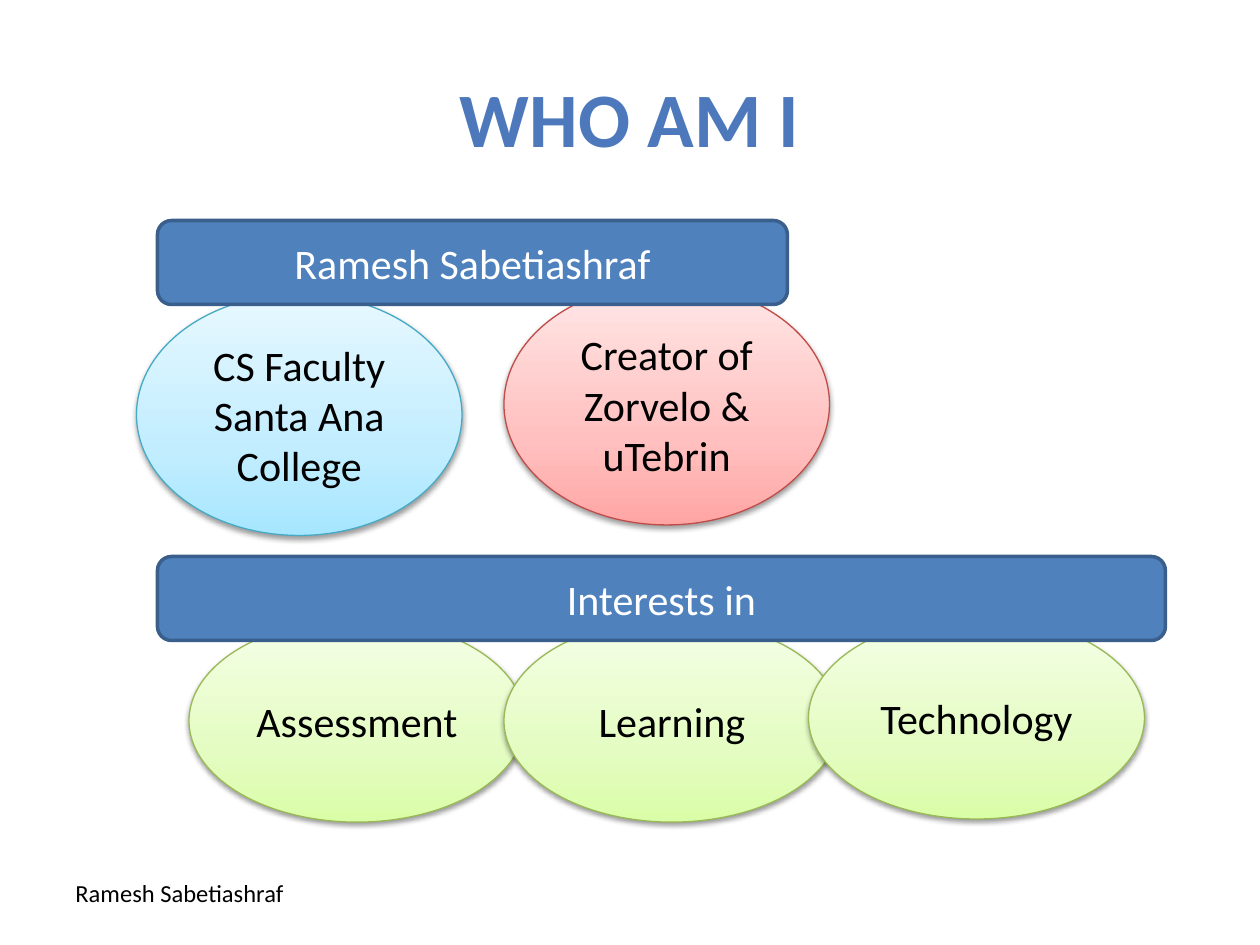
from dataclasses import dataclass

from lxml import etree
from pptx import Presentation
from pptx.dml.color import RGBColor
from pptx.enum.shapes import MSO_SHAPE
from pptx.enum.text import MSO_ANCHOR, PP_ALIGN
from pptx.oxml.ns import qn
from pptx.util import Inches, Pt

ELLIPSE, BAR = MSO_SHAPE.OVAL, MSO_SHAPE.ROUNDED_RECTANGLE
TOP, MIDDLE = MSO_ANCHOR.TOP, MSO_ANCHOR.MIDDLE
LEFT, CENTER = PP_ALIGN.LEFT, PP_ALIGN.CENTER
UNIT = Inches(1) // 12  # grid of 120 columns by 90 rows
FONT = "Calibri"

COLORS = {
    "title": "4D79BC", "text": "000000", "white": "FFFFFF",
    "bar": "4F81BD", "bar_line": "3A5F8C",
    "blue_line": "46AAC5", "red_line": "BF4C48", "green_line": "98B955",
}
# Gradient stops from bottom to top
GRADIENTS = {
    "blue": {0: "A7E6FF", 35: "C1EDFF", 100: "E7F8FF"},
    "red": {0: "FFA6A5", 35: "FFC0BF", 100: "FFE7E7"},
    "green": {0: "DAFDA7", 35: "E4FCC2", 100: "F5FFE7"},
}


@dataclass(frozen=True)
class Box:
    """A place on the grid, in columns and rows."""
    column: float
    row: float
    columns: float
    rows: float

    def place(self) -> list[int]:
        return [round(n * UNIT) for n in (self.column, self.row, self.columns, self.rows)]


@dataclass(frozen=True)
class Bubble:
    box: Box
    lines: tuple[str, ...]
    tone: str


@dataclass(frozen=True)
class Bar:
    box: Box
    label: str


def interest(column: float, row: float, label: str) -> Bubble:
    return Bubble(Box(column, row, 32, 19.3), (label,), "green")


# Back to front
DIAGRAM = [
    Bubble(Box(13, 28, 31, 23), ("CS Faculty", "Santa Ana College"), "blue"),
    Bubble(Box(48, 27, 31, 23), ("Creator of Zorvelo & uTebrin",), "red"),
    interest(18, 59, "Assessment"),
    Bar(Box(15, 21, 60, 8), "Ramesh Sabetiashraf"),
    interest(48, 59, "Learning"),
    interest(77, 58.7, "Technology"),
    Bar(Box(15, 53, 96, 8), "Interests in"),
]


def rgb(name: str) -> RGBColor:
    return RGBColor.from_string(COLORS[name])


def write(shape, *lines: str, size: float = 24, color: str = "text",
          bold: bool = False, align=CENTER, anchor=MIDDLE) -> None:
    frame = shape.text_frame
    frame.word_wrap = True
    frame.vertical_anchor = anchor
    frame.text = "\n".join(lines)
    for paragraph in frame.paragraphs:
        paragraph.alignment = align
        font = paragraph.runs[0].font
        font.name, font.size, font.bold = FONT, Pt(size), bold
        font.color.rgb = rgb(color)


def add_color(parent, value: str):
    return etree.SubElement(parent, qn("a:srgbClr"), val=value)


def fill_gradient(shape, stops: dict[int, str]) -> None:
    shape.fill.gradient()
    shape.fill.gradient_angle = 90
    stop_list = shape._element.spPr.find(".//" + qn("a:gsLst"))
    for stop in list(stop_list):
        stop_list.remove(stop)
    for position, value in stops.items():
        add_color(etree.SubElement(stop_list, qn("a:gs"), pos=str(position * 1000)), value)


def add_shadow(shape) -> None:
    effects = shape._element.spPr.find(qn("a:effectLst"))
    shadow = etree.SubElement(effects, qn("a:outerShdw"), blurRad=str(Pt(3.1)),
                              dist=str(Pt(1.6)), dir="5400000", rotWithShape="0")
    etree.SubElement(add_color(shadow, COLORS["text"]), qn("a:alpha"), val="38000")


def add_outlined(slide, kind, box: Box, line: str, width: float):
    shape = slide.shapes.add_shape(kind, *box.place())
    shape.shadow.inherit = False
    shape.line.color.rgb = rgb(line)
    shape.line.width = Pt(width)
    return shape


def draw_bubble(slide, bubble: Bubble) -> None:
    shape = add_outlined(slide, ELLIPSE, bubble.box, bubble.tone + "_line", 0.75)
    fill_gradient(shape, GRADIENTS[bubble.tone])
    add_shadow(shape)
    write(shape, *bubble.lines)


def draw_bar(slide, bar: Bar) -> None:
    shape = add_outlined(slide, BAR, bar.box, "bar_line", 2)
    shape.fill.solid()
    shape.fill.fore_color.rgb = rgb("bar")
    write(shape, bar.label, color="white")


def main() -> None:
    presentation = Presentation()
    presentation.slide_width, presentation.slide_height = 120 * UNIT, 90 * UNIT
    slide = presentation.slides.add_slide(presentation.slide_layouts[6])

    # Footer
    footer = slide.shapes.add_textbox(*Box(6, 83, 33, 6.8).place())
    write(footer, "Ramesh Sabetiashraf", size=14, align=LEFT, anchor=TOP)

    # Title
    title = slide.shapes.add_textbox(*Box(6, 3.6, 108, 15).place())
    title.fill.solid()
    title.fill.fore_color.rgb = rgb("white")
    write(title, "WHO AM I", size=44, color="title", bold=True)

    # Bars with their bubbles
    for part in DIAGRAM:
        draw = draw_bar if isinstance(part, Bar) else draw_bubble
        draw(slide, part)

    presentation.save("out.pptx")


if __name__ == "__main__":
    main()
